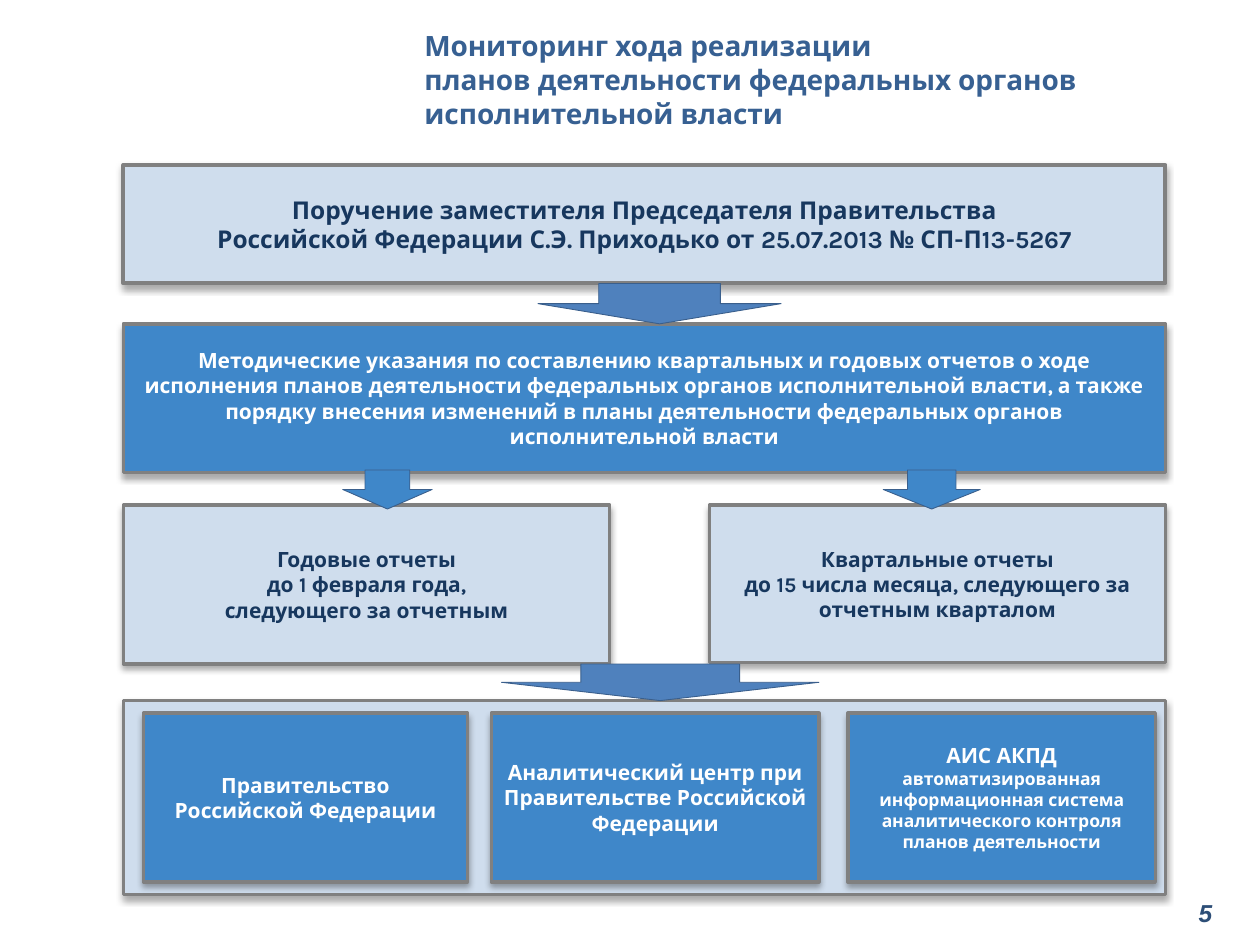
from lxml import etree
from pptx import Presentation
from pptx.dml.color import RGBColor
from pptx.enum import shapes, text
from pptx.oxml import ns
from pptx.util import Inches, Pt

THEME = {
    "font": "Karla", "number_font": "Arial",
    "title": "376092", "number": "2D4E77", "border": "808080",
    "light": "CFDDED", "strong": "3F87C9", "dark_text": "17375E", "white": "FFFFFF",
    "arrow": "4F81BD", "arrow_border": "3A5F8C",
    "title_size": 16, "large": 14, "body": 12, "small": 10,
}

# Content
TITLE = "Мониторинг хода реализации\vпланов деятельности федеральных органов исполнительной власти"
PAGE = "5"
ORDER = ["Поручение заместителя Председателя Правительства",
         "Российской Федерации С.Э. Приходько от 25.07.2013 № СП-П13-5267"]
GUIDELINES = ["Методические указания по составлению квартальных и годовых отчетов о ходе "
              "исполнения планов деятельности федеральных органов исполнительной власти, "
              "а также порядку внесения изменений в планы деятельности федеральных органов "
              "исполнительной власти"]
ANNUAL = ["Годовые отчеты", "до 1 февраля года,", "следующего за отчетным"]
QUARTERLY = ["Квартальные отчеты", "до 15 числа месяца, следующего за отчетным кварталом"]
# Recipients: left, width, lines, sizes
RECIPIENTS = [
    (1.14, 2.57, ["Правительство Российской Федерации"], ["body"]),
    (3.9, 2.6, ["Аналитический центр при Правительстве Российской Федерации"], ["body"]),
    (6.73, 2.44, ["АИС АКПД", "автоматизированная информационная система "
                  "аналитического контроля планов деятельности"], ["body", "small"]),
]

# Layout
LEFT, WIDTH = 0.98, 8.27
RIGHT = LEFT + WIDTH
ORDER_TOP, ORDER_HEIGHT = 1.31, 0.94
GUIDE_TOP, GUIDE_HEIGHT = 2.57, 1.18
REPORT_TOP, ANNUAL_WIDTH, QUARTERLY_WIDTH = 4.01, 3.86, 3.62
PANEL_TOP, PANEL_HEIGHT, PANEL_PAD = 5.56, 1.54, 0.1

# Arrows: left, top, width, height, fill
ARROWS = [
    (4.27, 2.25, 1.93, 0.32, "arrow"),
    (2.72, 3.73, 0.71, 0.31, "strong"),
    (7.01, 3.73, 0.77, 0.31, "strong"),
    (3.98, 5.27, 2.52, 0.29, "arrow"),
]


def color(name):
    return RGBColor.from_string(THEME[name])


def write(frame, lines, sizes, ink, align, font="font", italic=False):
    frame.word_wrap = True
    frame.vertical_anchor = text.MSO_ANCHOR.MIDDLE
    for i, (line, size) in enumerate(zip(lines, sizes)):
        paragraph = frame.paragraphs[0] if i == 0 else frame.add_paragraph()
        paragraph.text = line
        paragraph.alignment = align
        paragraph.font.name = THEME[font]
        paragraph.font.size = Pt(THEME[size])
        paragraph.font.bold = True
        paragraph.font.italic = italic
        paragraph.font.color.rgb = color(ink)


def add_filled(slide, kind, box, fill, border, border_width):
    shape = slide.shapes.add_shape(kind, *map(Inches, box))
    shape.shadow.inherit = False
    shape.fill.solid()
    shape.fill.fore_color.rgb = color(fill)
    shape.line.color.rgb = color(border)
    shape.line.width = Pt(border_width)
    return shape


def add_soft_shadow(shape):
    effects = shape._element.spPr.find(ns.qn("a:effectLst"))
    shadow = etree.SubElement(effects, ns.qn("a:outerShdw"), blurRad=str(Pt(3.5)),
                              dist=str(Pt(2.2)), dir="5400000", rotWithShape="0")
    black = etree.SubElement(shadow, ns.qn("a:srgbClr"), val="000000")
    etree.SubElement(black, ns.qn("a:alpha"), val="32000")


def add_block(slide, box, fill, lines=(), sizes=None, border_width=2):
    block = add_filled(slide, shapes.MSO_SHAPE.RECTANGLE, box, fill, "border", border_width)
    add_soft_shadow(block)
    ink = "white" if fill == "strong" else "dark_text"
    write(block.text_frame, lines, sizes or ["body"] * len(lines), ink, text.PP_ALIGN.CENTER)


def main():
    deck = Presentation()
    deck.slide_width, deck.slide_height = Inches(10), Inches(7.5)
    slide = deck.slides.add_slide(deck.slide_layouts[6])

    # Page number and title
    page = slide.shapes.add_textbox(*map(Inches, (7.22, 6.98, 2.5, 0.52)))
    write(page.text_frame, [PAGE], ["large"], "number", text.PP_ALIGN.RIGHT,
          font="number_font", italic=True)
    title = slide.shapes.add_textbox(*map(Inches, (3.27, 0, 6.73, 1.62)))
    title.text_frame.margin_bottom = Inches(0.41)
    write(title.text_frame, [TITLE], ["title_size"], "title", text.PP_ALIGN.LEFT)

    # Order and guidelines
    add_block(slide, (LEFT, ORDER_TOP, WIDTH, ORDER_HEIGHT), "light", ORDER,
              ["large"] * len(ORDER), 2.25)
    add_block(slide, (LEFT, GUIDE_TOP, WIDTH, GUIDE_HEIGHT), "strong", GUIDELINES)

    # Reports
    add_block(slide, (RIGHT - QUARTERLY_WIDTH, REPORT_TOP, QUARTERLY_WIDTH, 1.25),
              "light", QUARTERLY)
    add_block(slide, (LEFT, REPORT_TOP, ANNUAL_WIDTH, 1.26), "light", ANNUAL)

    # Recipients on their panel
    add_block(slide, (LEFT, PANEL_TOP, WIDTH, PANEL_HEIGHT), "light")
    for left, width, lines, sizes in RECIPIENTS:
        add_block(slide, (left, PANEL_TOP + PANEL_PAD, width, PANEL_HEIGHT - 2 * PANEL_PAD),
                  "strong", lines, sizes)

    # Arrows between levels
    for *box, fill in ARROWS:
        add_filled(slide, shapes.MSO_SHAPE.DOWN_ARROW, box, fill, "arrow_border", 0.5)

    deck.save("out.pptx")


if __name__ == "__main__":
    main()
